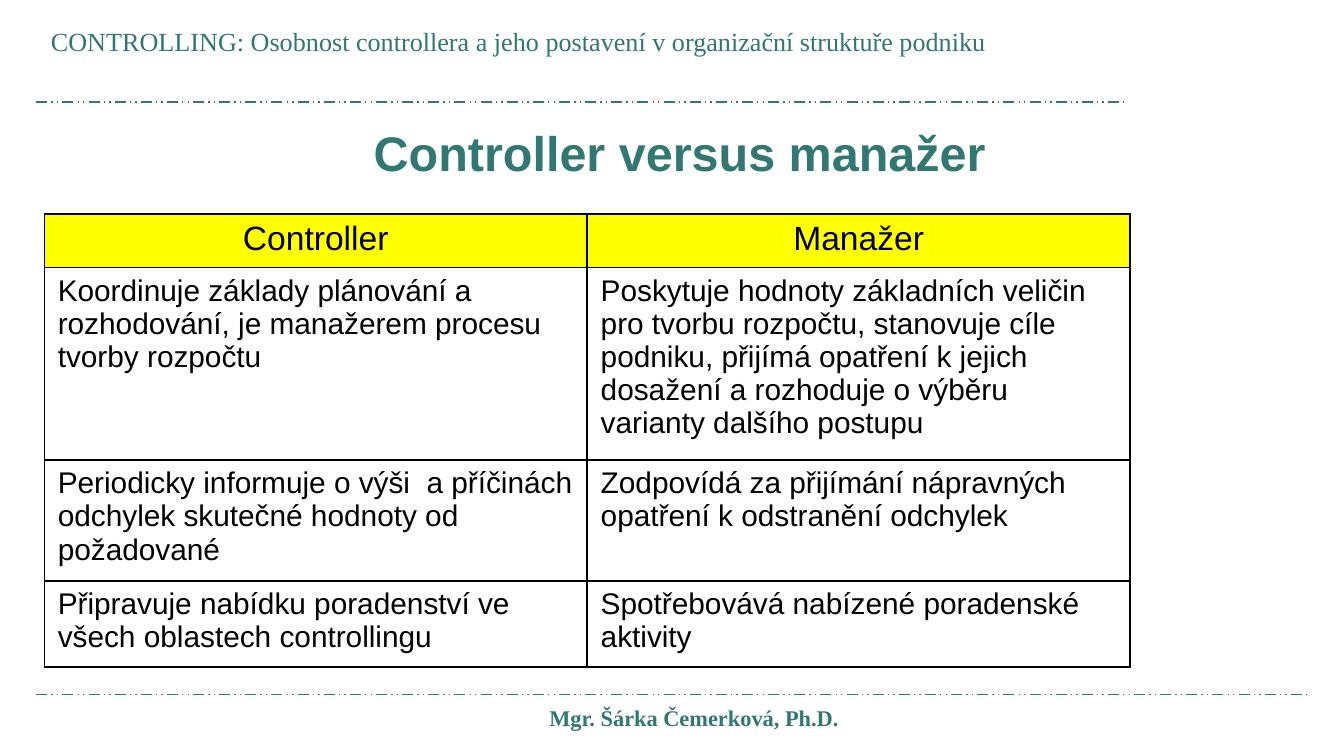
from lxml import etree
from pptx import Presentation
from pptx.dml.color import RGBColor
from pptx.enum.dml import MSO_LINE
from pptx.enum.shapes import MSO_CONNECTOR
from pptx.enum.text import MSO_ANCHOR, MSO_AUTO_SIZE, PP_ALIGN
from pptx.oxml.ns import qn
from pptx.util import Inches, Pt

TEAL = RGBColor(0x30, 0x78, 0x71)
YELLOW = RGBColor(0xFF, 0xFF, 0x00)
BLACK = RGBColor(0x00, 0x00, 0x00)
SANS = "Arial"
SERIF = "Times New Roman"
LEFT, CENTER = PP_ALIGN.LEFT, PP_ALIGN.CENTER
TOP, MIDDLE = MSO_ANCHOR.TOP, MSO_ANCHOR.MIDDLE
STRAIGHT = MSO_CONNECTOR.STRAIGHT
DASH_DOT_DOT = MSO_LINE.DASH_DOT_DOT
TITLE_ONLY = 5
SLIDE_WIDTH = 10
SLIDE_HEIGHT = SLIDE_WIDTH * 9 / 16

HEADINGS = ("Controller", "Manažer")
COMPARISON = [
    ("Koordinuje základy plánování a rozhodování, je manažerem procesu tvorby rozpočtu",
     "Poskytuje hodnoty základních veličin pro tvorbu rozpočtu, stanovuje cíle podniku, "
     "přijímá opatření k jejich dosažení a rozhoduje o výběru varianty dalšího postupu"),
    ("Periodicky informuje o výši  a příčinách odchylek skutečné hodnoty od požadované",
     "Zodpovídá za přijímání nápravných opatření k odstranění odchylek"),
    ("Připravuje nabídku poradenství ve všech oblastech controllingu",
     "Spotřebovává nabízené poradenské aktivity"),
]
ROW_HEIGHTS = (0.4, 1.43, 0.9, 0.64)


def write_text(frame, text, *, size, font=SANS, color=BLACK, bold=False, align=LEFT):
    paragraph = frame.paragraphs[0]
    paragraph.text = text
    paragraph.alignment = align
    paragraph.font.name = font
    paragraph.font.size = Pt(size)
    paragraph.font.bold = bold
    paragraph.font.color.rgb = color
    return paragraph


def add_cell_borders(cell, color=BLACK, width=1):
    properties = cell._tc.get_or_add_tcPr()
    for position, side in enumerate(("a:lnL", "a:lnR", "a:lnT", "a:lnB")):
        border = etree.Element(qn(side), w=str(Pt(width)))
        fill = etree.SubElement(border, qn("a:solidFill"))
        etree.SubElement(fill, qn("a:srgbClr"), val=str(color))
        properties.insert(position, border)


class SlideBuilder:
    def __init__(self, slide, accent=TEAL):
        self.slide = slide
        self.accent = accent

    def title(self, text, left, top, width, height):
        shape = self.slide.shapes.title
        shape.left, shape.top = Inches(left), Inches(top)
        shape.width, shape.height = Inches(width), Inches(height)
        frame = shape.text_frame
        frame.word_wrap = False
        frame.auto_size = MSO_AUTO_SIZE.NONE
        frame.vertical_anchor = TOP
        paragraph = write_text(frame, text, size=26, color=self.accent, bold=True)
        paragraph.line_spacing = 1.15
        paragraph.space_before = Pt(0)
        paragraph.space_after = Pt(10)

    def text_box(self, text, left, top, width, height, anchor=TOP, **text_format):
        shape = self.slide.shapes.add_textbox(
            Inches(left), Inches(top), Inches(width), Inches(height))
        shape.text_frame.word_wrap = True
        shape.text_frame.vertical_anchor = anchor
        write_text(shape.text_frame, text, font=SERIF, color=self.accent, **text_format)

    def rule(self, left, right, y):
        connector = self.slide.shapes.add_connector(
            STRAIGHT, Inches(left), Inches(y), Inches(right), Inches(y))
        connector.line.color.rgb = self.accent
        connector.line.width = Pt(0.75)
        connector.line.dash_style = DASH_DOT_DOT
        etree.SubElement(connector._element.spPr, qn("a:effectLst"))

    def table(self, headings, rows, left, top, width, row_heights):
        shape = self.slide.shapes.add_table(
            len(rows) + 1, len(headings), Inches(left), Inches(top),
            Inches(width), Inches(sum(row_heights)))
        table = shape.table
        table.first_row = table.horz_banding = False
        for column in table.columns:
            column.width = Inches(width / len(headings))
        for row, height, texts in zip(table.rows, row_heights, [headings, *rows]):
            row.height = Inches(height)
            is_heading = texts is headings
            for cell, text in zip(row.cells, texts):
                if is_heading:
                    cell.fill.solid()
                    cell.fill.fore_color.rgb = YELLOW
                else:
                    cell.fill.background()
                add_cell_borders(cell)
                write_text(cell.text_frame, text, size=18 if is_heading else 16,
                           align=CENTER if is_heading else LEFT)


def main():
    presentation = Presentation()
    presentation.slide_width = Inches(SLIDE_WIDTH)
    presentation.slide_height = Inches(SLIDE_HEIGHT)
    slide = presentation.slides.add_slide(presentation.slide_layouts[TITLE_ONLY])
    builder = SlideBuilder(slide)
    builder.rule(0.27, 8.39, 0.76)
    builder.rule(0.27, 9.75, 5.17)
    builder.text_box(
        "CONTROLLING: Osobnost controllera a jeho postavení v organizační struktuře podniku",
        0.28, 0.14, 8.19, 0.55, size=14)
    builder.text_box("Mgr. Šárka Čemerková, Ph.D.", 1.46, 5.17, 7.41, 0.34,
                     anchor=MIDDLE, size=12, bold=True, align=CENTER)
    builder.table(HEADINGS, COMPARISON, 0.33, 1.59, 8.08, ROW_HEIGHTS)
    builder.title("Controller versus manažer", 2.68, 0.8, 4.81, 0.56)
    presentation.save("out.pptx")


if __name__ == "__main__":
    main()
